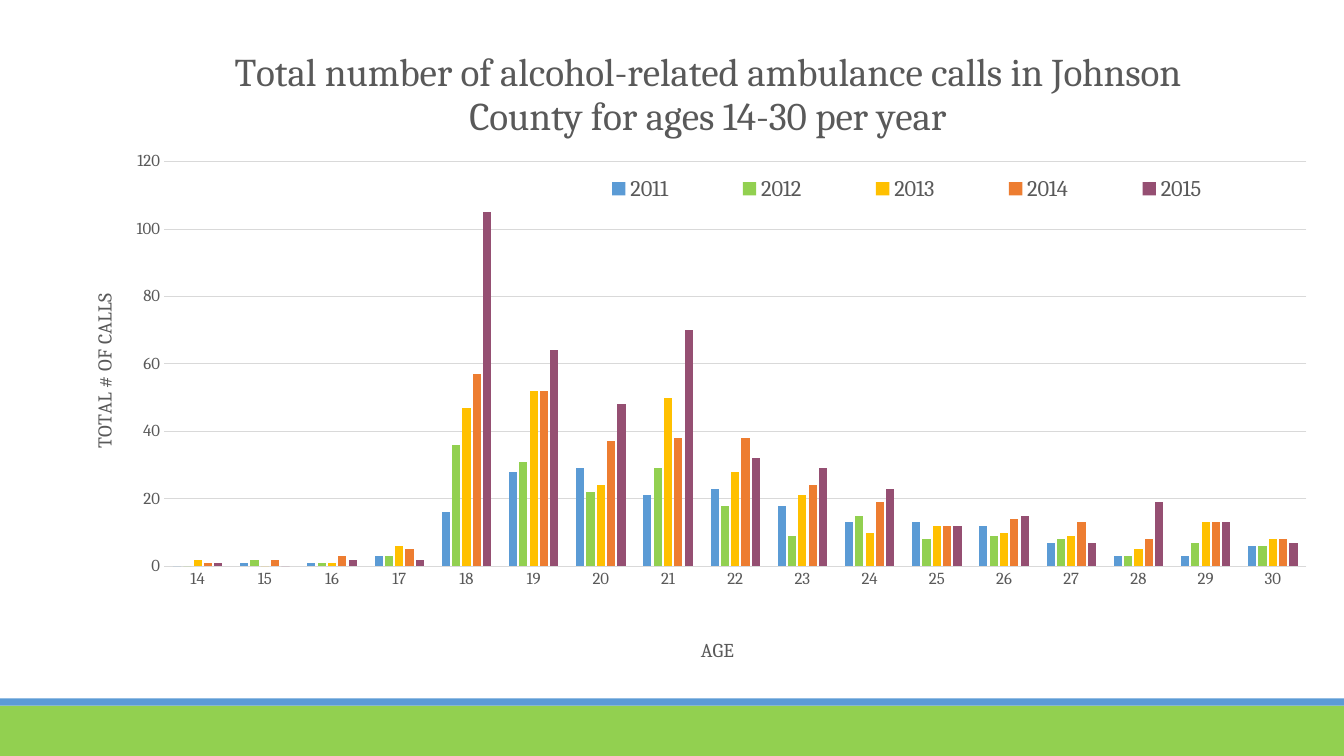
from lxml.etree import SubElement
from pptx import Presentation
from pptx.chart.data import CategoryChartData
from pptx.dml.color import RGBColor
from pptx.enum.chart import XL_CHART_TYPE, XL_LEGEND_POSITION, XL_TICK_MARK
from pptx.enum.shapes import MSO_SHAPE
from pptx.oxml.ns import qn
from pptx.util import Inches, Pt

WIDE, HIGH = 13.33, 7.5
FACE, GREY, RULE = "Cambria", "595959", "D9D9D9"
BLUE, GREEN = "5B9BD5", "92D050"
TITLE = ("Total number of alcohol-related ambulance calls in Johnson "
         "County for ages 14-30 per year")
AGES = range(14, 31)
CALLS = {
    "2011": (BLUE, [0, 1, 1, 3, 16, 28, 29, 21, 23, 18, 13, 13, 12, 7, 3, 3, 6]),
    "2012": (GREEN, [0, 2, 1, 3, 36, 31, 22, 29, 18, 9, 15, 8, 9, 8, 3, 7, 6]),
    "2013": ("FFC000", [2, 0, 1, 6, 47, 52, 24, 50, 28, 21, 10, 12, 10, 9, 5, 13, 8]),
    "2014": ("ED7D31", [1, 2, 3, 5, 57, 52, 37, 38, 38, 24, 19, 12, 14, 13, 8, 13, 8]),
    "2015": ("954F72", [1, 0, 2, 2, 105, 64, 48, 70, 32, 29, 23, 12, 15, 7, 19, 13, 7]),
}


def tint(text):
    """Turn a hex string into a colour."""
    return RGBColor.from_string(text)


def style(font, size):
    """Give a font the face and grey of the chart."""
    font.name, font.size, font.bold = FACE, Pt(size), False
    font.color.rgb = tint(GREY)


def band(slide, top, high, color):
    """Draw a full-width band."""
    shape = slide.shapes.add_shape(
        MSO_SHAPE.RECTANGLE, 0, Inches(top), Inches(WIDE), Inches(high))
    shape.shadow.inherit = False
    shape.fill.solid()
    shape.fill.fore_color.rgb = tint(color)
    shape.line.fill.background()


def place(part, index, inner=False, **shares):
    """Fix a chart part at shares of the chart's size."""
    for old in part.findall(qn("c:layout")):
        part.remove(old)
    layout = part.makeelement(qn("c:layout"), {})
    part.insert(index, layout)
    manual = SubElement(layout, qn("c:manualLayout"))
    if inner:
        SubElement(manual, qn("c:layoutTarget"), val="inner")
    for mode in ("xMode", "yMode"):
        SubElement(manual, qn("c:" + mode), val="edge")
    for key, share in shares.items():
        SubElement(manual, qn("c:" + key), val=str(share))


def label(title, text, size, x, y, turn=0):
    """Write and place a title of the chart or of an axis."""
    frame = title.text_frame
    frame.text = text
    style(frame.paragraphs[0].runs[0].font, size)
    frame._txBody.bodyPr.set("rot", str(turn * 60000))
    place(title._element, 1, x=x, y=y)


def trim(axis):
    """Set the ticks and number font of an axis."""
    axis.major_tick_mark = axis.minor_tick_mark = XL_TICK_MARK.NONE
    style(axis.tick_labels.font, 12)


def rule(line):
    """Draw a thin pale line."""
    line.color.rgb = tint(RULE)
    line.width = Pt(0.75)


def graph(slide):
    """Add the column chart of calls by age and year."""
    data = CategoryChartData()
    data.categories = [str(age) for age in AGES]
    for year, (_, counts) in CALLS.items():
        data.add_series(year, counts)
    chart = slide.shapes.add_chart(
        XL_CHART_TYPE.COLUMN_CLUSTERED, Inches(0.62), Inches(0.2),
        Inches(12.59), Inches(6.69), data).chart
    style(chart.font, 10)
    plot = chart.plots[0]
    plot.gap_width, plot.overlap, plot.vary_by_categories = 219, -27, False
    for bars, (color, _) in zip(plot.series, CALLS.values()):
        bars.format.fill.solid()
        bars.format.fill.fore_color.rgb = tint(color)
    base, side = chart.category_axis, chart.value_axis
    trim(base)
    trim(side)
    rule(base.format.line)
    rule(side.major_gridlines.format.line)
    side.format.line.fill.background()
    side.minimum_scale, side.maximum_scale, side.major_unit = 0, 120, 20
    chart.has_title = chart.has_legend = True
    label(chart.chart_title, TITLE, 28, 0.13, 0.03)
    label(base.axis_title, "AGE", 14, 0.5, 0.91)
    label(side.axis_title, "TOTAL # OF CALLS", 14, 0.02, 0.4, -90)
    key = chart.legend
    key.position = XL_LEGEND_POSITION.BOTTOM
    key.include_in_layout = False
    style(key.font, 16)
    place(key._element, 1, x=0.38, y=0.22, w=0.57, h=0.06)
    place(chart._chartSpace.chart.plotArea, 0, True, x=0.08, y=0.21, w=0.9, h=0.6)


def main():
    """Build and save the slide."""
    deck = Presentation()
    deck.slide_width, deck.slide_height = Inches(WIDE), Inches(HIGH)
    slide = deck.slides.add_slide(deck.slide_layouts[6])
    band(slide, 7, 0.5, GREEN)
    band(slide, 6.93, 0.07, BLUE)
    graph(slide)
    deck.save("out.pptx")


if __name__ == "__main__":
    main()
